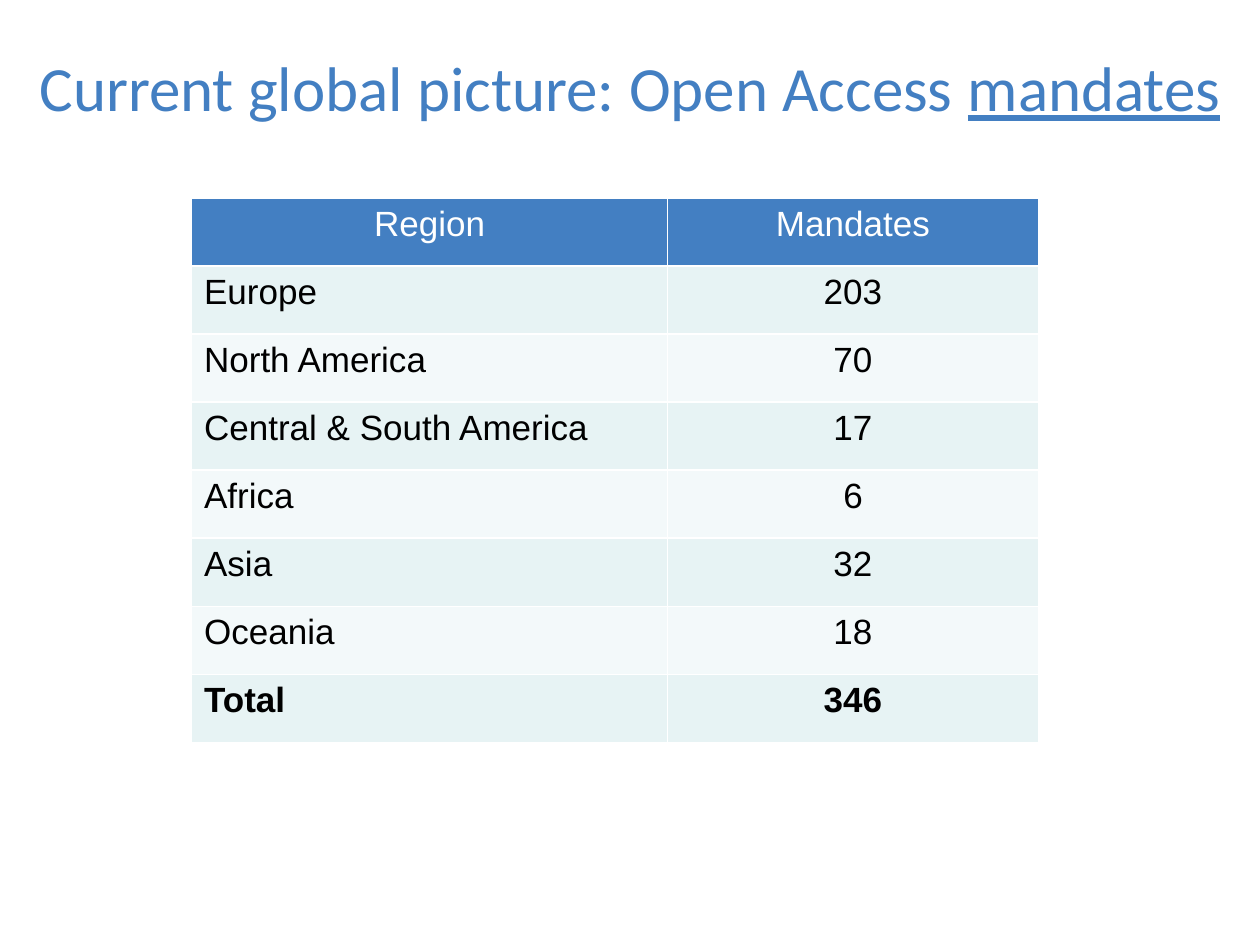
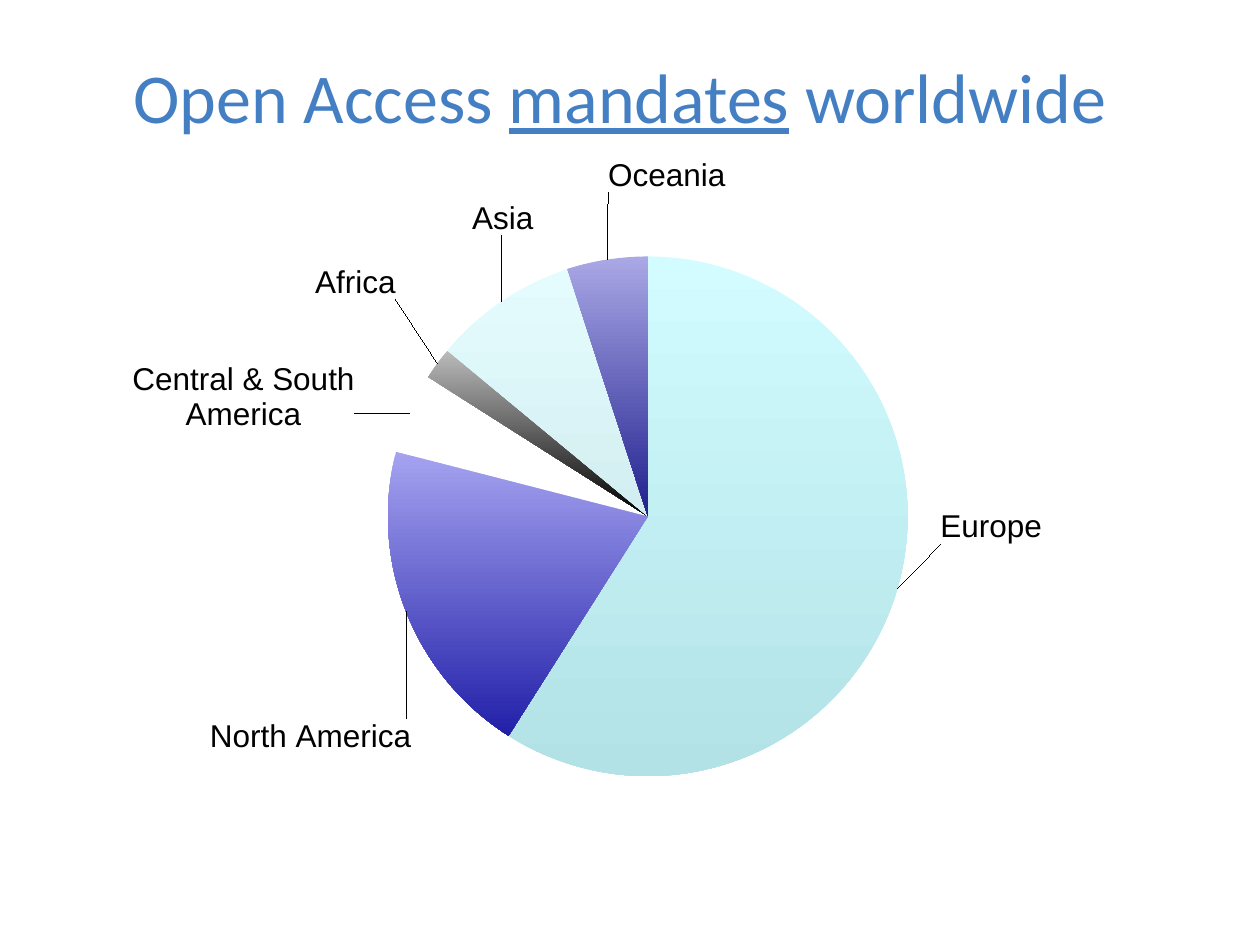
"""Build two slides on Open Access mandates: a table by region and a pie chart."""
from pptx import Presentation
from pptx.chart.data import CategoryChartData
from pptx.dml.color import RGBColor
from pptx.enum.chart import XL_CHART_TYPE
from pptx.enum.text import MSO_ANCHOR, PP_ALIGN
from pptx.oxml import parse_xml
from pptx.oxml.ns import nsdecls
from pptx.util import Cm, Pt

COLORS = {
    "accent": "437FC2",
    "header_text": "FFFFFF",
    "text": "000000",
    "band_dark": "E7F3F4",
    "band_light": "F3F9FA",
}
TITLE_FONT, BODY_FONT = "Calibri", "Arial"


def rgb(name):
    return RGBColor.from_string(COLORS[name])


def add_titled_slide(parts, left, top, width, height, size):
    slide = deck.slides.add_slide(deck.slide_layouts[5])
    title = slide.shapes.title
    title.left, title.top, title.width, title.height = (
        Cm(length) for length in (left, top, width, height))
    title.text_frame.vertical_anchor = MSO_ANCHOR.MIDDLE
    paragraph = title.text_frame.paragraphs[0]
    paragraph.alignment = PP_ALIGN.CENTER
    for words in parts:
        run = paragraph.add_run()
        run.text = words
        run.font.name = TITLE_FONT
        run.font.size = Pt(size)
        run.font.color.rgb = rgb("accent")
        run.font.underline = words == "mandates"
    return slide


deck = Presentation()
deck.slide_width, deck.slide_height = Cm(25.4), Cm(19.05)

table_slide = add_titled_slide(
    ["Current global picture: Open Access ", "mandates"], 0, 0.74, 25.4, 2, 36)

mandate_rows = [
    ("Region", "Mandates"),
    ("Europe", "203"),
    ("North America", "70"),
    ("Central & South America", "17"),
    ("Africa", "6"),
    ("Asia", "32"),
    ("Oceania", "18"),
    ("Total", "346"),
]
mandates = table_slide.shapes.add_table(
    len(mandate_rows), 2, Cm(3.86), Cm(3.99), Cm(17.07), Cm(10.98)).table
mandates.columns[0].width, mandates.columns[1].width = Cm(9.6), Cm(7.47)

for row_index, row_texts in enumerate(mandate_rows):
    is_header = row_index == 0
    band = "accent" if is_header else ("band_light", "band_dark")[row_index % 2]
    for column_index, words in enumerate(row_texts):
        cell = mandates.cell(row_index, column_index)
        cell.margin_top = cell.margin_bottom = Cm(0.13)
        cell.fill.solid()
        cell.fill.fore_color.rgb = rgb(band)
        cell.text_frame.text = words
        paragraph = cell.text_frame.paragraphs[0]
        centred = is_header or column_index == 1
        paragraph.alignment = PP_ALIGN.CENTER if centred else PP_ALIGN.LEFT
        font = paragraph.runs[0].font
        font.name = BODY_FONT
        font.size = Pt(20)
        font.bold = words in mandate_rows[-1]
        font.color.rgb = rgb("header_text" if is_header else "text")

pie_slide = add_titled_slide(
    ["Open Access ", "mandates", " worldwide"], 1.7, 0.74, 21.59, 2.39, 40)

# Region, share, gradient top and bottom, label shift as a fraction of the chart
regions = [
    ("Europe", 59, "D2FCFF", "B2E2E6", 0.03, -0.11),
    ("North America", 20, "A5A3F0", "2220A8", 0.01, 0.14),
    ("Central & South America", 5, "FFFFFF", "FFFFFF", -0.04, 0.03),
    ("Africa", 2, "BBBBBB", "000000", -0.03, -0.08),
    ("Asia", 9, "E5FCFF", "D3EEF0", 0.03, -0.08),
    ("Oceania", 5, "AAA8E5", "20208F", 0.1, -0.08),
]
shares = CategoryChartData()
shares.categories = [region[0] for region in regions]
shares.add_series("Series 1", [region[1] for region in regions])
pie = pie_slide.shapes.add_chart(
    XL_CHART_TYPE.PIE, Cm(0.66), Cm(2.92), Cm(24.1), Cm(15.01), shares).chart
pie.has_legend = pie.has_title = False
pie.font.name = BODY_FONT
pie.font.size = Pt(18)
pie.font.color.rgb = rgb("text")
pie.plots[0].vary_by_categories = True

plot_area = pie.plots[0]._element.getparent()
for old_layout in plot_area.findall("{*}layout"):
    plot_area.remove(old_layout)
plot_area.insert(0, parse_xml(
    f'<c:layout {nsdecls("c")}><c:manualLayout><c:layoutTarget val="inner"/>'
    '<c:xMode val="edge"/><c:yMode val="edge"/><c:x val="0.118"/><c:y val="0.15"/>'
    '<c:w val="0.793"/><c:h val="0.698"/></c:manualLayout></c:layout>'))

series = pie.plots[0].series[0]
labels = series.data_labels
labels.show_category_name = True
labels.show_value = False
for index, (region, share, top_color, bottom_color, shift_x, shift_y) in enumerate(regions):
    slice_format = series.points[index].format
    slice_format.line.fill.background()
    slice_format.fill.gradient()
    slice_format.fill.gradient_angle = 270
    for stop, color in zip(slice_format.fill.gradient_stops, (top_color, bottom_color)):
        stop.color.rgb = RGBColor.from_string(color)
    labels._element.insert(index, parse_xml(
        f'<c:dLbl {nsdecls("c")}><c:idx val="{index}"/><c:layout><c:manualLayout>'
        f'<c:x val="{shift_x}"/><c:y val="{shift_y}"/></c:manualLayout></c:layout>'
        '<c:dLblPos val="outEnd"/><c:showLegendKey val="0"/><c:showVal val="0"/>'
        '<c:showCatName val="1"/><c:showSerName val="0"/><c:showPercent val="0"/>'
        '<c:showBubbleSize val="0"/></c:dLbl>'))

deck.save("out.pptx")
